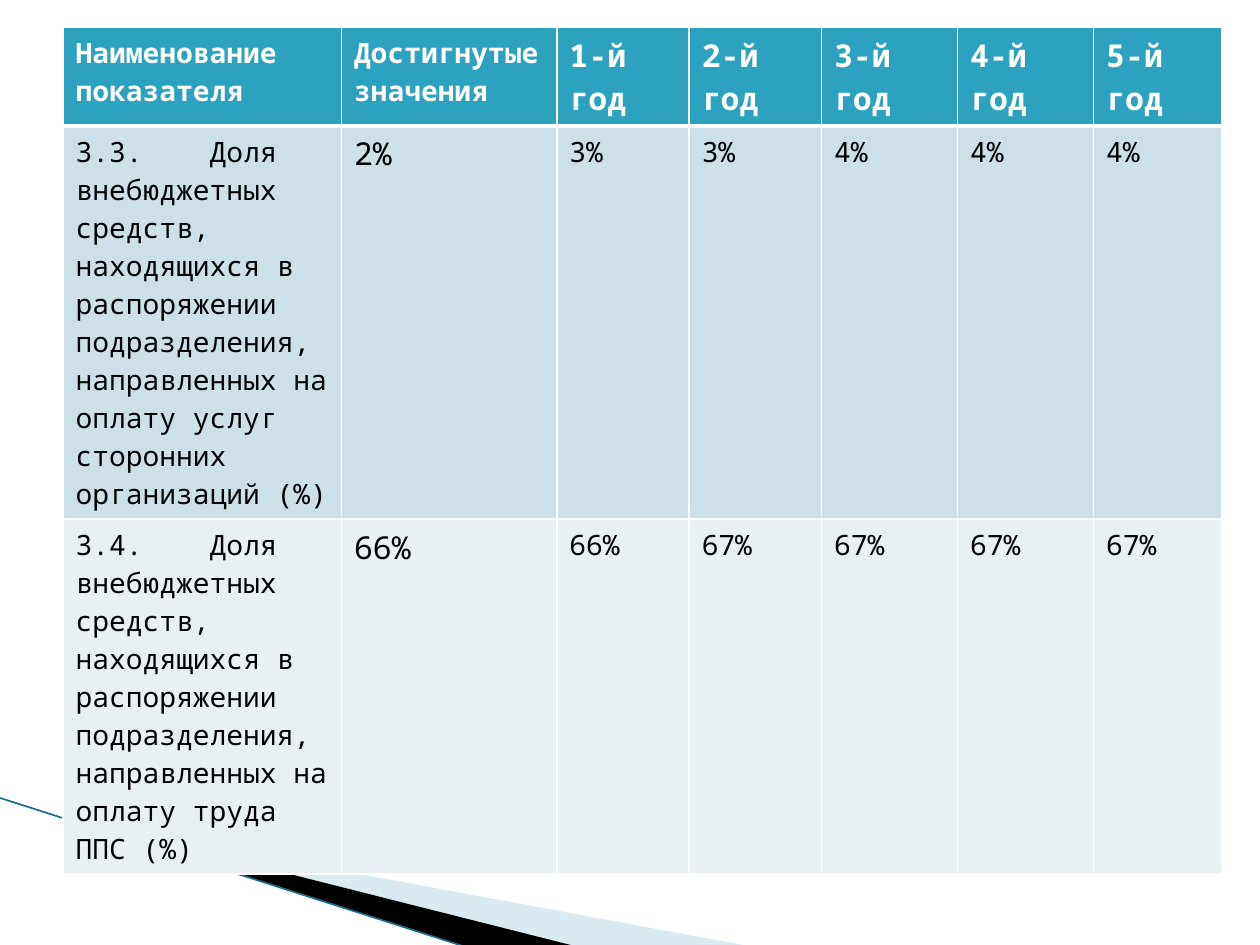
from lxml import etree
from pptx import Presentation
from pptx.dml.color import RGBColor
from pptx.oxml.ns import qn
from pptx.util import Inches, Pt

WHITE = RGBColor(0xFF, 0xFF, 0xFF)
BLACK = RGBColor(0x00, 0x00, 0x00)
HEADER_BLUE = RGBColor(0x2D, 0xA2, 0xBF)
BAND_DARK = RGBColor(0xCD, 0xE0, 0xE8)
BAND_LIGHT = RGBColor(0xE8, 0xF0, 0xF4)
WEDGE_BLUE = RGBColor(0xA0, 0xCB, 0xDC)
EDGE_TEAL = RGBColor(0x1B, 0x6F, 0x86)
FONT = "Noto Sans Mono"
STRAIGHT = 1

COLUMN_WIDTHS = [2.21, 1.71, 1.05, 1.05, 1.08, 1.08, 1.02]
ROW_HEIGHTS = [0.76, 3.12, 2.81]
HEADER = ["Наименование показателя", "Достигнутые значения"] + [
    f"{year}-й год" for year in range(1, 6)
]
SHARE = (
    "Доля внебюджетных средств, находящихся в распоряжении подразделения, "
    "направленных на оплату"
)
INDICATORS = [
    [f"3.3.    {SHARE} услуг сторонних организаций (%)",
     "2%", "3%", "3%", "4%", "4%", "4%"],
    [f"3.4.    {SHARE} труда ППС (%)",
     "66%", "66%", "67%", "67%", "67%", "67%"],
]


def write_text(frame, text, size=16, color=BLACK, bold=False):
    """Write one formatted paragraph into a text frame."""
    frame.word_wrap = True
    span = frame.paragraphs[0].add_run()
    span.text = text
    span.font.name = FONT
    span.font.size = Pt(size)
    span.font.bold = bold
    span.font.color.rgb = color


def set_borders(cell, bottom=1, top=1):
    """Give a cell white borders of the given widths in points."""
    properties = cell._tc.get_or_add_tcPr()
    widths = {"a:lnL": 1, "a:lnR": 1, "a:lnT": top, "a:lnB": bottom}
    for position, (tag, width) in enumerate(widths.items()):
        line = etree.Element(qn(tag), w=str(Pt(width)))
        fill = etree.SubElement(line, qn("a:solidFill"))
        etree.SubElement(fill, qn("a:srgbClr"), val=str(WHITE))
        properties.insert(position, line)


def set_frame(shape, left, top, width, height):
    """Change the frame of a freeform while its outline stays in place."""
    shift_x, shift_y = shape.left - left, shape.top - top
    outline = shape._element.spPr.find(".//" + qn("a:path"))
    for point in outline.iter(qn("a:pt")):
        point.set("x", str(int(point.get("x")) + shift_x))
        point.set("y", str(int(point.get("y")) + shift_y))
    outline.set("w", str(width))
    outline.set("h", str(height))
    shape.left, shape.top, shape.width, shape.height = left, top, width, height


def add_wedge(page, frame, points, color, opacity=100):
    """Draw a filled outline that may reach beyond its frame."""
    corners = [(Inches(x), Inches(y)) for x, y in points]
    builder = page.shapes.build_freeform(*corners[0])
    builder.add_line_segments(corners[1:], close=True)
    wedge = builder.convert_to_shape()
    set_frame(wedge, *map(Inches, frame))
    wedge.shadow.inherit = False
    wedge.fill.solid()
    wedge.fill.fore_color.rgb = color
    wedge.line.fill.background()
    if opacity < 100:
        shade = wedge._element.spPr.find(".//" + qn("a:srgbClr"))
        etree.SubElement(shade, qn("a:alpha"), val=str(opacity * 1000))


def add_corner_decoration(page, left, top, width, height):
    """Draw the two wedges and the edge line in the lower left corner."""
    add_wedge(page, (left + 0.79, top - 0.86, 4.16, 1.58),
              [(left + x, top + y) for x, y in
               [(0.56, 0.18), (5.96, 1.18), (4.57, 1.18), (0.56, 0.17)]],
              WEDGE_BLUE, opacity=40)
    add_wedge(page, (left - 0.05, top, 4.16, 0.92),
              [(left + x, top + y) for x, y in
               [(0.54, 0.16), (4.58, 1.18), (3.73, 1.19), (0.55, 0.17)]],
              BLACK)
    edge = page.shapes.add_connector(
        STRAIGHT, Inches(left), Inches(top),
        Inches(left + width), Inches(top + height))
    edge.line.color.rgb = EDGE_TEAL
    edge.line.width = Pt(0.95)
    etree.SubElement(edge._element.spPr, qn("a:effectLst"))


def add_indicator_table(page, left, top):
    """Place the table of indicators by year."""
    rows = [HEADER] + INDICATORS
    table = page.shapes.add_table(
        len(rows), len(HEADER), Inches(left), Inches(top),
        Inches(sum(COLUMN_WIDTHS)), Inches(sum(ROW_HEIGHTS))).table
    for column, width in zip(table.columns, COLUMN_WIDTHS):
        column.width = Inches(width)
    for row, height in zip(table.rows, ROW_HEIGHTS):
        row.height = Inches(height)
    fills = [HEADER_BLUE, BAND_DARK, BAND_LIGHT]
    for row_index, values in enumerate(rows):
        is_header = row_index == 0
        for column_index, value in enumerate(values):
            cell = table.cell(row_index, column_index)
            cell.fill.solid()
            cell.fill.fore_color.rgb = fills[row_index]
            set_borders(cell, bottom=3 if is_header else 1,
                        top=3 if row_index == 1 else 1)
            large = column_index > 1 if is_header else column_index == 1
            write_text(cell.text_frame, value, size=18 if large else 16,
                       color=WHITE if is_header else BLACK, bold=is_header)


def main():
    """Build the slide and save the deck."""
    deck = Presentation()
    deck.slide_width, deck.slide_height = Inches(10), Inches(7.5)
    page = deck.slides.add_slide(deck.slide_layouts[6])
    add_corner_decoration(page, -0.01, 6.33, 3.72, 1.19)
    add_indicator_table(page, 0.5, 0.22)
    deck.save("out.pptx")


if __name__ == "__main__":
    main()
